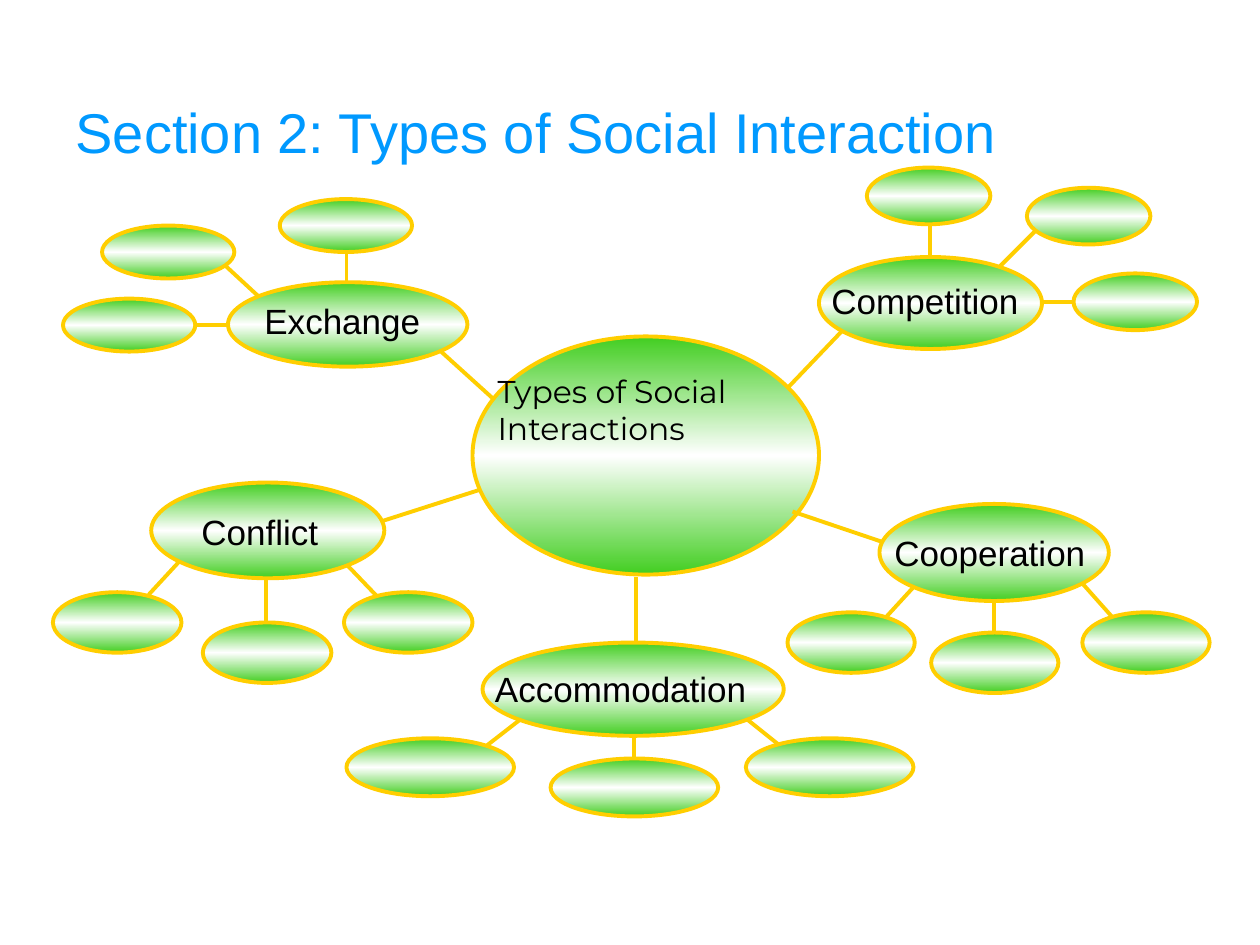
from copy import deepcopy
from pptx import Presentation
from pptx.dml.color import RGBColor
from pptx.enum.shapes import MSO_CONNECTOR, MSO_SHAPE
from pptx.enum.text import MSO_ANCHOR, MSO_AUTO_SIZE, PP_ALIGN
from pptx.oxml.ns import qn
from pptx.util import Inches, Pt

COLORS = {"title": "0099FF", "text": "000000", "green": "42CE21",
          "white": "FFFFFF", "gold": "FFCE00"}

TITLE = ("Section 2: Types of Social Interaction", (0.5, 0.75, 9, 0.58))
CENTER = {"text": "Types of Social Interactions",
          "oval": (3.75, 2.67, 2.75, 1.89), "label": (3.85, 2.9, 2.58, 1.3)}
LABEL_HEIGHT = 0.43

BRANCHES = [
    {"text": "Exchange", "label": (2, 2.33, 1.67), "oval": (1.81, 2.24, 1.9, 0.67),
     "leaf_size": (1.05, 0.42), "leaves": [(2.22, 1.58), (0.81, 1.79), (0.5, 2.37)],
     "lines": [(3.5, 2.79, 3.92, 3.17), (2.75, 2.24, 2.75, 2),
               (2.05, 2.35, 1.79, 2.11), (1.81, 2.58, 1.55, 2.58)]},
    {"text": "Competition", "label": (6.5, 2.17, 1.92), "oval": (6.5, 2.04, 1.77, 0.73),
     "leaf_size": (0.98, 0.45), "leaves": [(6.88, 1.33), (8.15, 1.49), (8.52, 2.17)],
     "lines": [(6.68, 2.63, 6.25, 3.08), (8.26, 2.4, 8.52, 2.4),
               (7.38, 2.05, 7.38, 1.79), (7.93, 2.12, 8.22, 1.83)]},
    {"text": "Cooperation", "label": (7, 4.17, 1.92), "oval": (6.98, 4, 1.82, 0.77),
     "leaf_size": (1.01, 0.48), "leaves": [(6.25, 4.86), (7.39, 5.02), (8.59, 4.86)],
     "lines": [(6.29, 4.06, 7, 4.3), (7.89, 4.76, 7.89, 5.02),
               (7.25, 4.66, 7.03, 4.9), (8.59, 4.63, 8.83, 4.9)]},
    {"text": "Accommodation", "label": (3.83, 5.25, 2.42), "oval": (3.83, 5.1, 2.39, 0.74),
     "leaf_size": (1.33, 0.46), "leaves": [(2.75, 5.86), (4.37, 6.02), (5.92, 5.86)],
     "lines": [(5.05, 4.58, 5.05, 5.1), (5.03, 5.84, 5.03, 6.02),
               (5.93, 5.71, 6.18, 5.91), (4.13, 5.71, 3.86, 5.92)]},
    {"text": "Conflict", "label": (1.5, 4, 1.5), "oval": (1.2, 3.83, 1.85, 0.76),
     "leaf_size": (1.02, 0.48), "leaves": [(0.42, 4.7), (1.61, 4.94), (2.73, 4.7)],
     "lines": [(3.8, 3.89, 3.02, 4.14), (2.11, 4.59, 2.11, 4.94),
               (2.76, 4.49, 2.99, 4.73), (1.42, 4.46, 1.18, 4.72)]},
]


def rgb(name):
    return RGBColor.from_string(COLORS[name])


def inches(box):
    return [Inches(v) for v in box]


def write(sp, text, size=20, font="Arial", color="text", anchor=MSO_ANCHOR.TOP):
    tf = sp.text_frame
    tf.word_wrap = True
    tf.auto_size = MSO_AUTO_SIZE.NONE
    tf.vertical_anchor = anchor
    p = tf.paragraphs[0]
    p.alignment = PP_ALIGN.LEFT
    r = p.add_run()
    r.text = text
    r.font.size = Pt(size)
    r.font.name = font
    r.font.color.rgb = rgb(color)


def outline(sp):
    sp.line.color.rgb = rgb("gold")
    sp.line.width = Pt(2.25)


def add_oval(s, box):
    sp = s.shapes.add_shape(MSO_SHAPE.OVAL, *inches(box))
    sp.shadow.inherit = False
    outline(sp)
    sp.fill.gradient()
    sp.fill.gradient_angle = 90
    stops = sp._element.spPr.find(".//" + qn("a:gsLst"))
    stops.append(deepcopy(stops[0]))
    for stop, name, pos in zip(sp.fill.gradient_stops, ("green", "white", "green"), (0, 0.5, 1)):
        stop.color.rgb = rgb(name)
        stop.position = pos


def add_line(s, ends):
    ln = s.shapes.add_connector(MSO_CONNECTOR.STRAIGHT, *inches(ends))
    outline(ln)
    spPr = ln._element.spPr
    spPr.append(spPr.makeelement(qn("a:effectLst"), {}))


def main():
    """Build the concept map of social interaction types."""
    prs = Presentation()
    prs.slide_width, prs.slide_height = Inches(10), Inches(7.5)
    s = prs.slides.add_slide(prs.slide_layouts[5])
    text, box = TITLE
    title = s.shapes.title
    title.left, title.top, title.width, title.height = inches(box)
    write(title, text, size=32, color="title", anchor=MSO_ANCHOR.MIDDLE)

    add_oval(s, CENTER["oval"])
    write(s.shapes.add_textbox(*inches(CENTER["label"])), CENTER["text"],
          size=18, font="Montserrat")

    for branch in BRANCHES:
        add_oval(s, branch["oval"])
        for leaf in branch["leaves"]:
            add_oval(s, leaf + branch["leaf_size"])
        for ends in branch["lines"]:
            add_line(s, ends)
    for branch in BRANCHES:
        write(s.shapes.add_textbox(*inches(branch["label"] + (LABEL_HEIGHT,))), branch["text"])
    prs.save("out.pptx")


if __name__ == "__main__":
    main()
